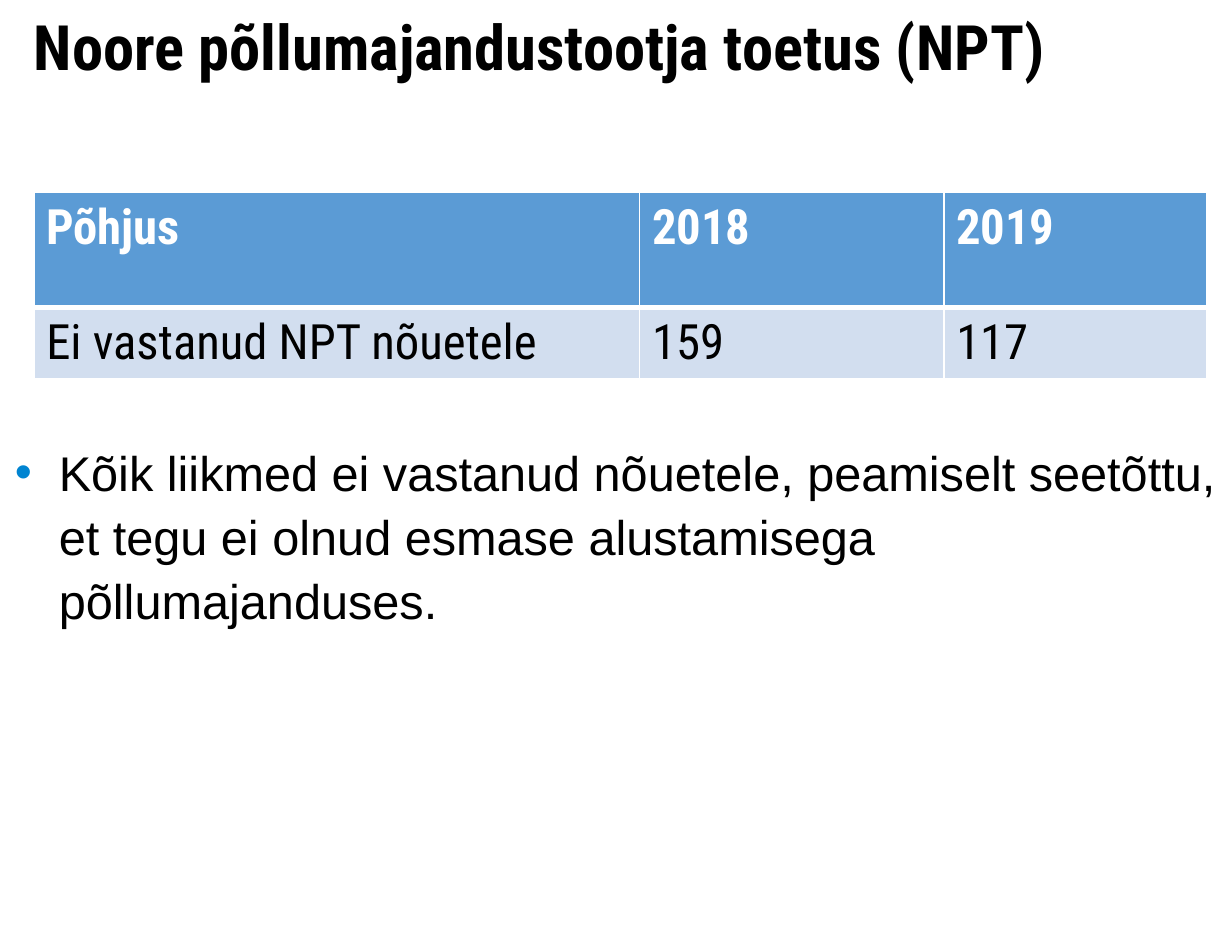
from dataclasses import dataclass

from lxml.etree import SubElement
from pptx import Presentation
from pptx.dml.color import RGBColor as RGB
from pptx.enum.text import MSO_ANCHOR as Anchor
from pptx.oxml import parse_xml
from pptx.oxml.ns import nsdecls, qn
from pptx.util import Inches, Pt


@dataclass(frozen=True)
class Theme:
    heading_font: str = "Roboto Condensed"
    body_font: str = "Arial"
    title_size: int = 36
    text_size: int = 28
    black: str = "000000"
    white: str = "FFFFFF"
    header: str = "5B9BD5"
    band: str = "D2DEEF"
    bullet: str = "0084D1"


THEME = Theme()
CM_PER_INCH = 2.54
COLUMNS = (4.84, 2.43, 2.1)
ROWS = (0.92, 0.5)
REJECTIONS = (
    ("Põhjus", "2018", "2019"),
    ("Ei vastanud NPT nõuetele", "159", "117"),
)


def add_run(p, text, font, size, color, bold=False):
    r = p.add_run()
    r.text = text
    r.font.name = font
    r.font.size = Pt(size)
    r.font.bold = bold
    r.font.color.rgb = RGB.from_string(color)


def add_text(s, left, top, width, height, inset_top=0):
    """Add a wrapping text box and return its first paragraph."""
    box = s.shapes.add_textbox(Inches(left), Inches(top), Inches(width), Inches(height))
    tf = box.text_frame
    tf.word_wrap = True
    tf.vertical_anchor = Anchor.TOP
    tf.margin_left = tf.margin_right = tf.margin_bottom = 0
    tf.margin_top = Inches(inset_top)
    return tf.paragraphs[0]


def add_bullet(p, indent, color):
    pPr = p._p.get_or_add_pPr()
    pPr.set("marL", str(Inches(indent)))
    pPr.set("indent", str(-Inches(0.35)))
    bu_color = SubElement(pPr, qn("a:buClr"))
    SubElement(bu_color, qn("a:srgbClr"), val=color)
    SubElement(pPr, qn("a:buFont"), typeface=THEME.body_font)
    SubElement(pPr, qn("a:buChar"), char="•")


def set_borders(cell, **widths):
    tcPr = cell._tc.get_or_add_tcPr()
    for i, side in enumerate("LRTB"):
        tcPr.insert(i, parse_xml(
            f'<a:ln{side} {nsdecls("a")} w="{Pt(widths.get(side, 1))}">'
            f'<a:solidFill><a:srgbClr val="{THEME.white}"/></a:solidFill></a:ln{side}>'))


def add_table(s, left, top, rows):
    frame = s.shapes.add_table(len(rows), len(COLUMNS), Inches(left), Inches(top),
                               Inches(sum(COLUMNS)), Inches(sum(ROWS)))
    table = frame.table
    for column, width in zip(table.columns, COLUMNS):
        column.width = Inches(width)
    for i, values in enumerate(rows):
        table.rows[i].height = Inches(ROWS[i])
        is_header = i == 0
        for j, value in enumerate(values):
            cell = table.cell(i, j)
            cell.fill.solid()
            cell.fill.fore_color.rgb = RGB.from_string(
                THEME.header if is_header else THEME.band)
            set_borders(cell, **({"B": 3} if is_header else {"T": 3}))
            p = cell.text_frame.paragraphs[0]
            p.line_spacing = 1.0
            add_run(p, value, THEME.heading_font, THEME.text_size,
                    THEME.white if is_header else THEME.black, is_header)


def main():
    # Page of 25 by 19 cm
    prs = Presentation()
    prs.slide_width = Inches(25 / CM_PER_INCH)
    prs.slide_height = Inches(19 / CM_PER_INCH)
    s = prs.slides.add_slide(prs.slide_layouts[6])

    # Title
    p = add_text(s, 0.27, 0.08, 9.57, 1.18, inset_top=0.06)
    p.line_spacing = 0.88
    add_run(p, "Noore põllumajandustootja toetus (NPT)",
            THEME.heading_font, THEME.title_size, THEME.black, True)

    # Explanation under the table
    p = add_text(s, 0, 3.49, 9.84, 1.6)
    p.line_spacing = 1.1
    p.space_after = Pt(8)
    add_bullet(p, 0.47, THEME.bullet)
    add_run(p, "Kõik liikmed ei vastanud nõuetele, peamiselt seetõttu, et tegu ei olnud "
               "esmase alustamisega põllumajanduses.",
            THEME.body_font, THEME.text_size, THEME.black)

    # Rejections by year
    add_table(s, 0.27, 1.54, REJECTIONS)

    prs.save("out.pptx")


if __name__ == "__main__":
    main()
